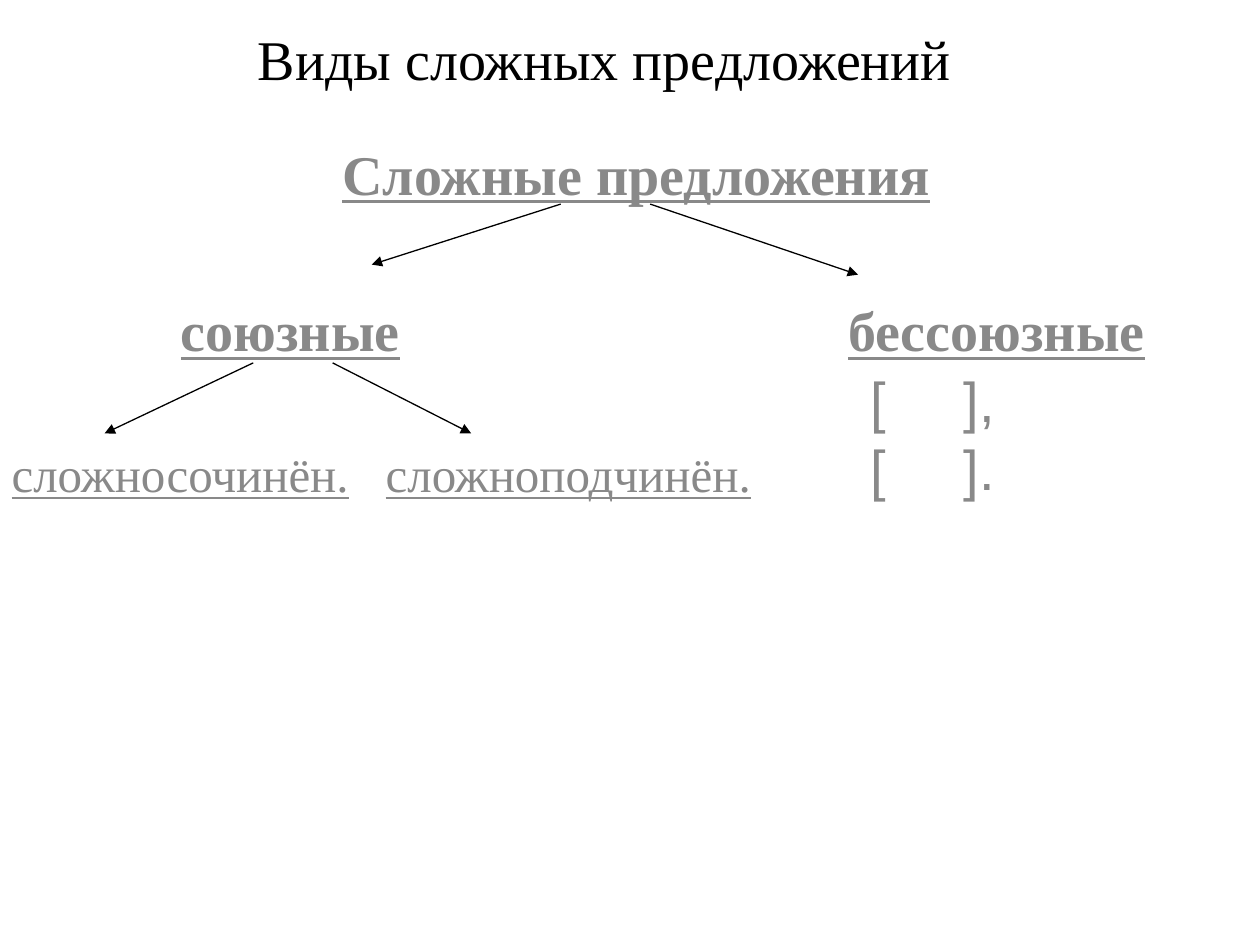
from lxml.etree import SubElement
from pptx import Presentation
from pptx.dml.color import RGBColor
from pptx.enum.shapes import MSO_CONNECTOR
from pptx.enum.text import MSO_ANCHOR, PP_ALIGN
from pptx.oxml.ns import qn
from pptx.util import Inches, Pt

COLORS = {"title": "000000", "label": "898989", "arrow": "000000"}
SERIF, SANS = "Times New Roman", "Arial"
COLUMNS, ROWS = 100, 75


class DiagramSlide:
    """Holds the page, its grid and the style of its parts."""

    def __init__(self, deck):
        self.page = deck.slides.add_slide(deck.slide_layouts[6])
        self.column = deck.slide_width / COLUMNS
        self.row = deck.slide_height / ROWS

    def point(self, column, row):
        return round(column * self.column), round(row * self.row)

    def text(self, lines, place, size=32, color="label", font=SERIF,
             bold=False, underline=False, align=PP_ALIGN.CENTER):
        left, top, width, height = place
        box = self.page.shapes.add_textbox(
            *self.point(left, top), *self.point(width, height))
        frame = box.text_frame
        frame.word_wrap = True
        frame.vertical_anchor = MSO_ANCHOR.MIDDLE
        frame.margin_left = frame.margin_right = 0
        frame.margin_top = frame.margin_bottom = 0
        for number, line in enumerate(lines):
            para = frame.add_paragraph() if number else frame.paragraphs[0]
            para.alignment = align
            span = para.add_run()
            span.text = line
            span.font.name = font
            span.font.size = Pt(size)
            span.font.bold = bold
            span.font.underline = underline
            span.font.color.rgb = RGBColor.from_string(COLORS[color])

    def label(self, words, center, top, width, size=32, bold=True):
        place = (center - width / 2, top, width, size * 0.16)
        self.text([words], place, size=size, bold=bold, underline=True)

    def arrow(self, start, end):
        arrow = self.page.shapes.add_connector(
            MSO_CONNECTOR.STRAIGHT, *self.point(*start), *self.point(*end))
        arrow.line.color.rgb = RGBColor.from_string(COLORS["arrow"])
        arrow.line.width = Pt(0.75)
        SubElement(arrow.line._get_or_add_ln(), qn("a:tailEnd"), type="triangle")
        SubElement(arrow._element.spPr, qn("a:effectLst"))


def main():
    deck = Presentation()
    deck.slide_width, deck.slide_height = Inches(10), Inches(7.5)
    slide = DiagramSlide(deck)

    # Title
    slide.text(["Виды сложных предложений"], (5.5, 2.3, 85, 4.7), color="title")

    # Sentence types, level by level
    slide.label("Сложные предложения", 50.5, 11.2, 60)
    for words, center in (("союзные", 23.05), ("бессоюзные", 79.1)):
        slide.label(words, center, 23.6, 30)
    for words, center in (("сложносочинён.", 14.3), ("сложноподчинён.", 45.1)):
        slide.label(words, center, 35.3, 28.6 if center < 20 else 30,
                    size=28, bold=False)

    # Scheme of a sentence without conjunctions
    slide.text(["[     ],", "[     ]."], (69.1, 29.3, 22.2, 10.3),
               font=SANS, align=PP_ALIGN.LEFT)

    # Arrows from each type to its kinds
    for start, end in (
        ((44.5, 16.2), (29.5, 21)),
        ((51.6, 16.2), (68.1, 21.8)),
        ((20.1, 28.8), (8.3, 34.4)),
        ((26.4, 28.8), (37.4, 34.4)),
    ):
        slide.arrow(start, end)

    deck.save("out.pptx")


if __name__ == "__main__":
    main()
